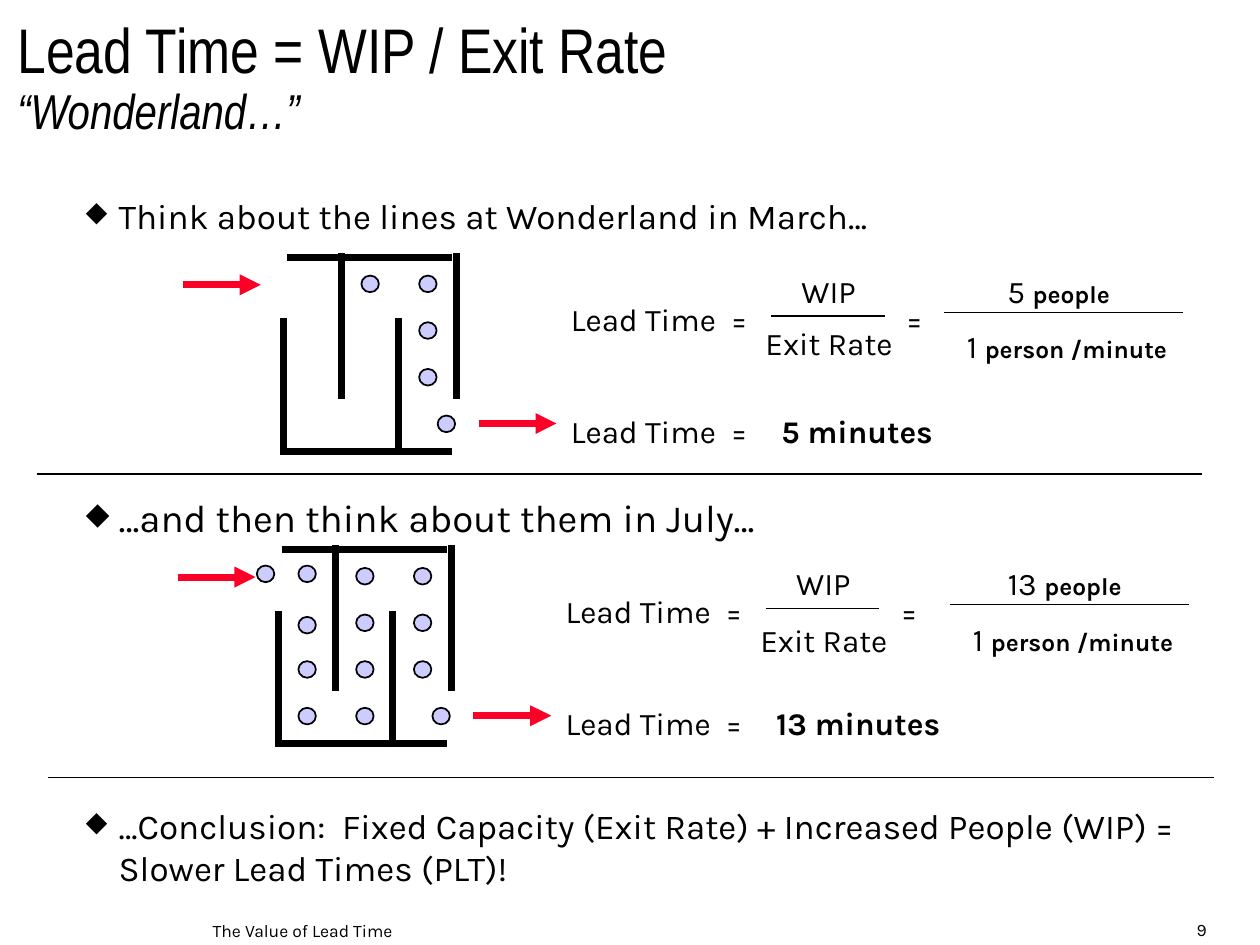
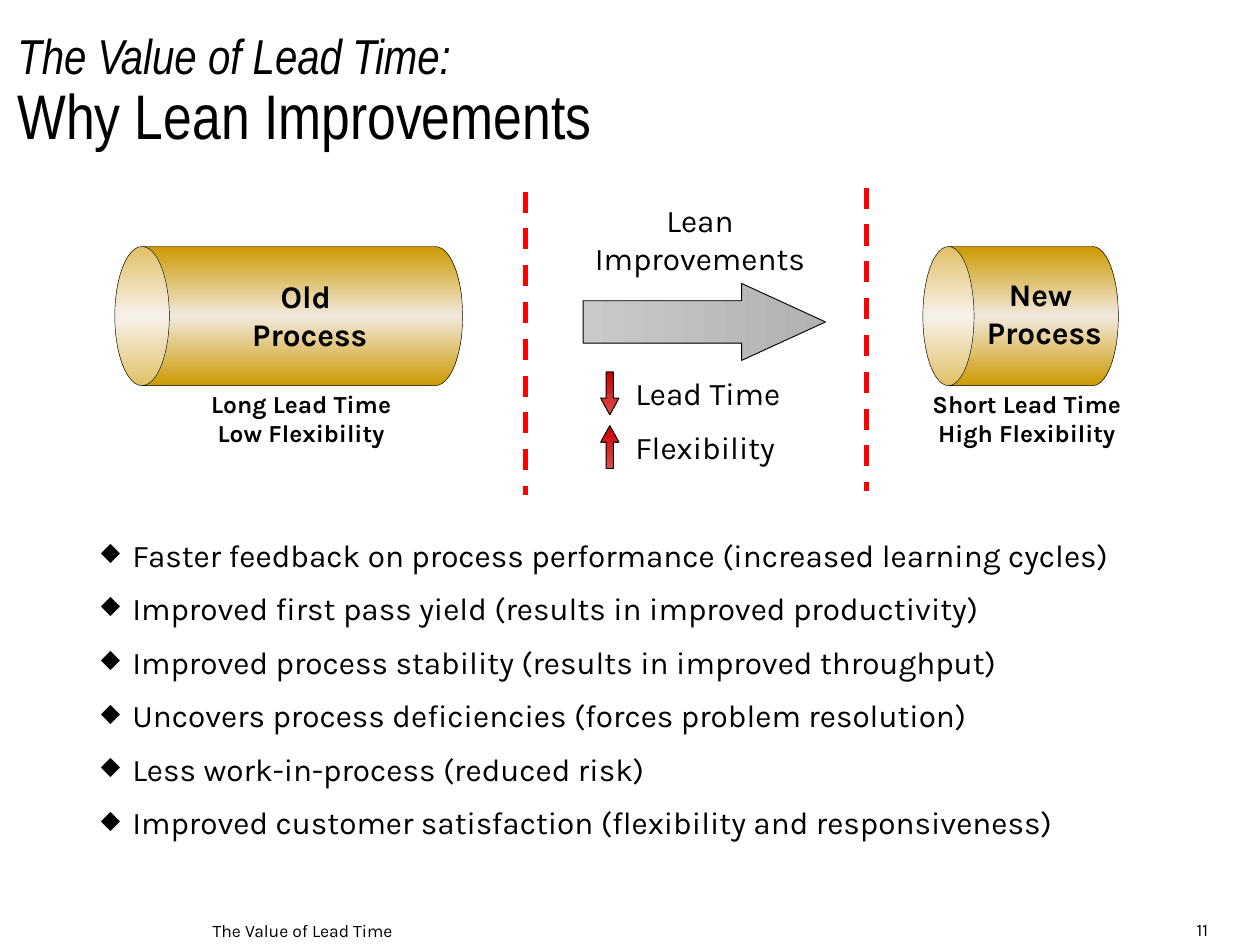
import copy

import pptx
import pptx.dml.color
import pptx.enum.dml
import pptx.enum.shapes
import pptx.enum.text
import pptx.oxml
import pptx.oxml.ns
import pptx.util

Pt = pptx.util.Pt
RGBColor = pptx.dml.color.RGBColor
SHAPE = pptx.enum.shapes.MSO_SHAPE
ALIGN = pptx.enum.text.PP_ALIGN
ANCHOR = pptx.enum.text.MSO_ANCHOR
NS = pptx.oxml.ns.nsdecls("a")
qn = pptx.oxml.ns.qn

BLACK = RGBColor(0x00, 0x00, 0x00)
ARROW_RED = RGBColor(0xFC, 0x01, 0x28)
DIVIDER_RED = RGBColor(0xFF, 0x00, 0x00)
DARK_RED = RGBColor(0xCC, 0x00, 0x00)
LIGHT_RED = RGBColor(0xDB, 0x4D, 0x4D)
LILAC = RGBColor(0xCC, 0xCC, 0xFF)
GOLD = RGBColor(0xCC, 0x99, 0x00)
CREAM = RGBColor(0xF2, 0xE9, 0xDE)
LIGHT_GREY = RGBColor(0xC9, 0xC9, 0xC9)
MID_GREY = RGBColor(0xB2, 0xB2, 0xB2)
TITLE_FONT = "Arial Narrow"
BODY_FONT = "Karla"


def add_text(slide, box, paragraphs, align=ALIGN.LEFT, anchor=ANCHOR.TOP,
             font=BODY_FONT, inset=(6.5, 3.6), hang=0, spacing=None):
    """Each paragraph is a list of (text, size, style); hang > 0 adds a diamond bullet."""
    frame = slide.shapes.add_textbox(*map(Pt, box)).text_frame
    frame.word_wrap = True
    frame.vertical_anchor = anchor
    frame.margin_left = frame.margin_right = Pt(inset[0])
    frame.margin_top = frame.margin_bottom = Pt(inset[1])
    for index, runs in enumerate(paragraphs):
        paragraph = frame.add_paragraph() if index else frame.paragraphs[0]
        paragraph.alignment = align
        paragraph.line_spacing = spacing
        if hang:
            if index:
                paragraph.space_before = Pt(runs[0][1] / 2)
            properties = paragraph._p.get_or_add_pPr()
            properties.set("marL", str(Pt(hang)))
            properties.set("indent", str(-Pt(hang)))
            for bullet in ('<a:buClr {}><a:srgbClr val="000000"/></a:buClr>',
                           '<a:buSzPct {} val="80000"/>', '<a:buChar {} char="◆"/>'):
                properties.append(pptx.oxml.parse_xml(bullet.format(NS)))
        for text, size, style in runs:
            if text == "\n":
                paragraph.add_line_break()
                continue
            run = paragraph.add_run()
            run.text = text
            run.font.name = font
            run.font.size = Pt(size)
            run.font.bold = "b" in style
            run.font.italic = "i" in style
            run.font.color.rgb = BLACK
            if "s" in style:
                run.font._element.find(qn("a:solidFill")).addnext(pptx.oxml.parse_xml(
                    f'<a:effectLst {NS}><a:outerShdw dist="17961" dir="2700000">'
                    '<a:srgbClr val="C0C0C0"/></a:outerShdw></a:effectLst>'))


def add_line(slide, start, end, color=BLACK, width=1, arrow=False, dash=None):
    line = slide.shapes.add_connector(
        pptx.enum.shapes.MSO_CONNECTOR.STRAIGHT, *map(Pt, (*start, *end)))
    line.line.color.rgb = color
    line.line.width = Pt(width)
    line.line.dash_style = dash
    if arrow:
        line.line._get_or_add_ln().append(
            pptx.oxml.parse_xml(f'<a:tailEnd {NS} type="triangle"/>'))
    line._element.spPr.append(pptx.oxml.parse_xml(f"<a:effectLst {NS}/>"))


prs = pptx.Presentation()
prs.slide_width, prs.slide_height = Pt(720), Pt(540)

# Titles and footers
slides = []
for number, anchor, title in (
    ("9", ANCHOR.MIDDLE, [("Lead Time = WIP / Exit Rate", 36, ""), ("\n", 36, ""),
                          ("“Wonderland…”", 28, "i")]),
    ("11", ANCHOR.BOTTOM, [("The Value of Lead Time:", 28, "i"), ("\n", 28, ""),
                           ("Why Lean Improvements", 36, "")]),
):
    slide = prs.slides.add_slide(prs.slide_layouts[6])
    slides.append(slide)
    add_text(slide, (3.5, 0.75, 598.5, 90), [title], anchor=anchor,
             font=TITLE_FONT, inset=(6.5, 3), spacing=0.9)
    add_text(slide, (114.5, 522, 487.5, 18.75), [[("The Value of Lead Time", 10, "")]],
             inset=(7.2, 3.6))
    add_text(slide, (676.75, 522, 36, 18.75), [[(number, 10, "")]],
             anchor=ANCHOR.BOTTOM, inset=(7.2, 3.6))
queues, improvements = slides

# Slide 1: statements and separators
for top, width, size, statement in (
    (108, 619, 20, "Think about the lines at Wonderland in March…"),
    (279.5, 619, 22, "…and then think about them in July…"),
    (456.5, 655, 20, "…Conclusion:  Fixed Capacity (Exit Rate) + Increased People (WIP) = "
                     "Slower Lead Times (PLT)!"),
):
    add_text(queues, (43.25, top, width, 40), [[(statement, size, "")]],
             inset=(5.75, 3), hang=18.75)
for left, y in ((21, 270.75), (27.5, 444.25)):
    add_line(queues, (left, y), (left + 666, y))

# Slide 1: one maze and one formula per month; visitors stand at (column, row)
WALLS = [((164, 147), (258.5, 147)), ((164, 257.75), (258.5, 257.75)),
         ((162, 260), (162, 182)), ((195, 228), (195, 144.5)),
         ((227.5, 260), (227.5, 182)), ((260.75, 228), (260.75, 144.5))]
ARROWS = [((104.5, 162.75), (149, 162.75)), ((273.5, 242), (318, 242))]
march_visitors = [(1, 0), (2, 0), (2, 1), (2, 2), (2.32, 3)]
july_visitors = march_visitors + [(1, 1), (1, 2), (1, 3), (0, 3), (0, 2),
                                  (0, 1.05), (0, -0.05), (-0.72, -0.05)]

for dx, dy, visitors, rate_dx, exit_dy in ((0, 0, march_visitors, 0, 0),
                                           (-3, 167, july_visitors, 6.5, 3)):
    for start, end in WALLS:
        add_line(queues, (start[0] + dx, start[1] + dy), (end[0] + dx, end[1] + dy), width=4)
    for start, end in ARROWS:
        add_line(queues, (start[0] + dx, start[1] + dy), (end[0] + dx, end[1] + dy),
                 ARROW_RED, 4, arrow=True)
    for column, row in visitors:
        visitor = queues.shapes.add_shape(
            SHAPE.OVAL, Pt(173.5 + 33 * column + dx), Pt(157.5 + 26.65 * row + dy),
            Pt(10), Pt(9.5))
        visitor.shadow.inherit = False
        visitor.fill.solid()
        visitor.fill.fore_color.rgb = LILAC
        visitor.line.color.rgb = BLACK
        visitor.line.width = Pt(1)

    count = len(visitors)
    for left, top, width, align, runs in (
        (319.75, 167.75, 132, ALIGN.LEFT, [("Lead Time  =", 18, "")]),
        (319.75, 231.75, 132, ALIGN.LEFT, [("Lead Time  =", 18, "")]),
        (445.75, 152, 55.5, ALIGN.CENTER, [("WIP", 18, "")]),
        (416.25, 181.5 + exit_dy, 115, ALIGN.CENTER, [("Exit Rate", 18, "")]),
        (511.25, 167.75, 33, ALIGN.LEFT, [("=", 18, "")]),
        (561 + rate_dx, 152, 88, ALIGN.CENTER, [(f"{count} ", 18, ""), ("people", 14, "b")]),
        (532 + rate_dx, 183.5, 155.5, ALIGN.CENTER,
         [("1 ", 18, ""), ("person /minute", 14, "b")]),
        (440, 231.75, 132, ALIGN.LEFT, [(f"{count} minutes", 18, "b")]),
    ):
        add_text(queues, (left + dx, top + dy, width, 26.5), [runs], align)
    for left, right, y in ((440.75, 505.5, 180.75),
                           (539.25 + rate_dx, 676 + rate_dx, 178.5)):
        add_line(queues, (left + dx, y + dy), (right + dx, y + dy))

# Slide 2: process cylinders and arrows
for kind, box, rotation, adjustments, angle, colors, outline in (
    (SHAPE.CAN, (125.25, 81.25, 79.5, 198.75), 270, [0.392], 0, [GOLD, CREAM, GOLD], 0.25),
    (SHAPE.CAN, (543.5, 124.75, 79.5, 111.75), 270, [0.368], 0, [GOLD, CREAM, GOLD], 0.25),
    (SHAPE.RIGHT_ARROW, (333.25, 162, 138.5, 44), 0, [0.551, 1.09], 0,
     [LIGHT_GREY, MID_GREY], 0.5),
    (SHAPE.DOWN_ARROW, (343.25, 212.5, 10.5, 24.5), 0, [0.39, 0.903], 270,
     [DARK_RED, LIGHT_RED], 0.5),
    (SHAPE.UP_ARROW, (343.25, 243.25, 10.5, 24.5), 0, [0.39, 0.903], 270,
     [DARK_RED, LIGHT_RED], 0.5),
):
    figure = improvements.shapes.add_shape(kind, *map(Pt, box))
    figure.shadow.inherit = False
    figure.rotation = rotation
    for index, value in enumerate(adjustments):
        figure.adjustments[index] = value
    figure.fill.gradient()
    figure.fill.gradient_angle = angle
    stop_list = figure._element.spPr.find(qn("a:gradFill")).find(qn("a:gsLst"))
    while len(stop_list) < len(colors):
        stop_list.append(copy.deepcopy(stop_list[0]))
    for index, stop in enumerate(figure.fill.gradient_stops):
        stop.position = index / (len(colors) - 1)
        stop.color.rgb = colors[index]
    figure.line.color.rgb = BLACK
    figure.line.width = Pt(outline)

# Slide 2: captions
for box, align, size, style, lines in (
    ((118, 146.25, 118, 67), ALIGN.CENTER, 18, "bs", ["Old ", "Process"]),
    ((537.75, 145.5, 118, 67), ALIGN.CENTER, 18, "bs", ["New ", "Process"]),
    ((324.75, 118.75, 150.5, 35.25), ALIGN.CENTER, 18, "", ["Lean", "Improvements"]),
    ((356.5, 212.5, 113.75, 24.5), ALIGN.LEFT, 18, "", ["Lead Time"]),
    ((356.5, 243.25, 113.75, 24.5), ALIGN.LEFT, 18, "", ["Flexibility"]),
    ((102.25, 222.5, 139.75, 33), ALIGN.CENTER, 14, "b", ["Long Lead Time", "Low Flexibility"]),
    ((515.5, 222.5, 142.5, 33), ALIGN.CENTER, 14, "b", ["Short Lead Time", "High Flexibility"]),
):
    add_text(improvements, box, [[(line, size, style)] for line in lines],
             align, ANCHOR.MIDDLE)

for x, top in ((300.25, 109.5), (495.25, 107.25)):
    add_line(improvements, (x, top), (x, top + 173.5), DIVIDER_RED, 3,
             dash=pptx.enum.dml.MSO_LINE.DASH)

# Slide 2: benefits
benefits = [
    "Faster feedback on process performance (increased learning cycles)",
    "Improved first pass yield (results in improved productivity)",
    "Improved process stability (results in improved throughput)",
    "Uncovers process deficiencies (forces problem resolution)",
    "Less work-in-process (reduced risk)",
    "Improved customer satisfaction (flexibility and responsiveness)",
]
add_text(improvements, (50.5, 302.5, 621.5, 191.5),
         [[(benefit, 18, "")] for benefit in benefits], inset=(7.2, 3.6), hang=18)

prs.save("out.pptx")
